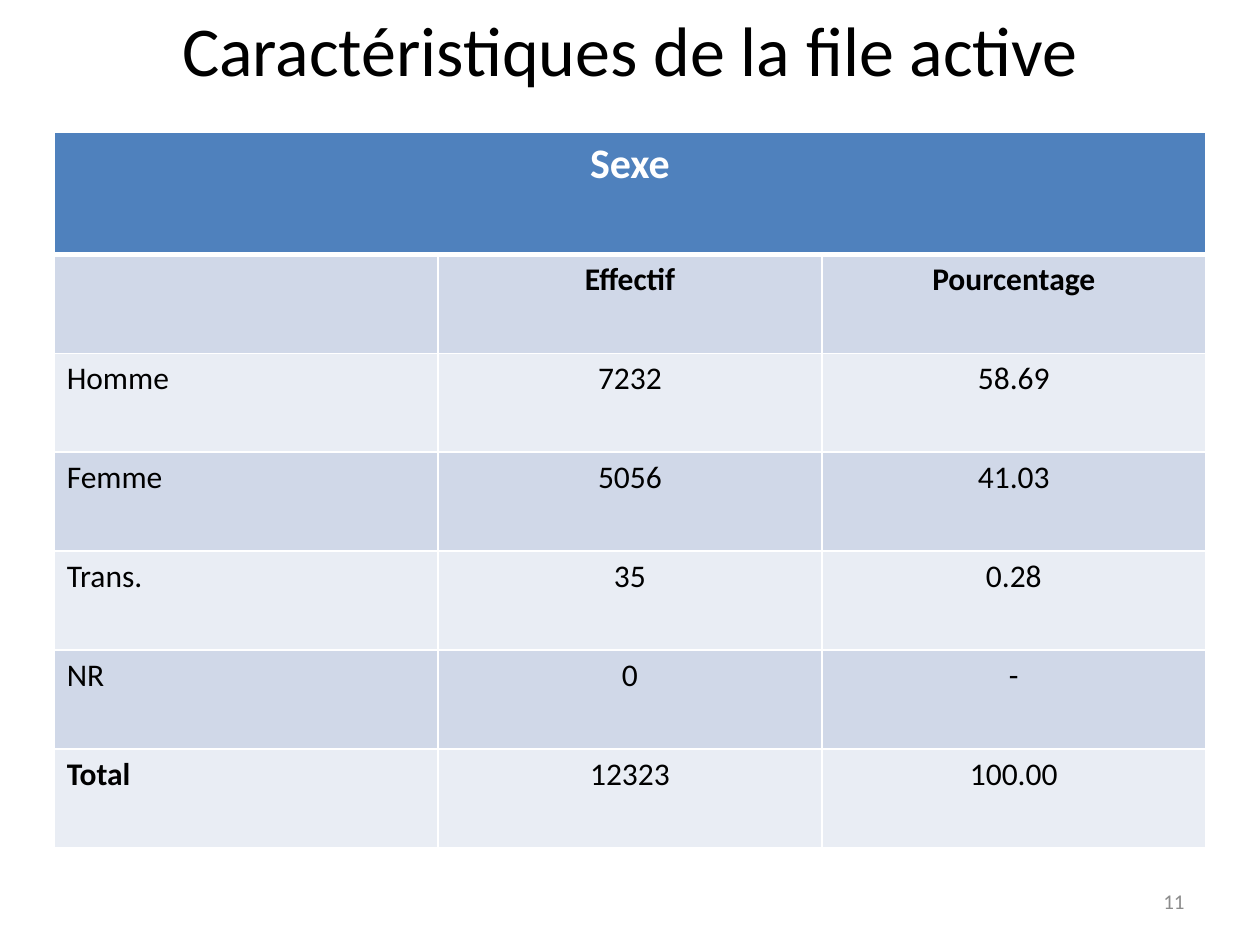
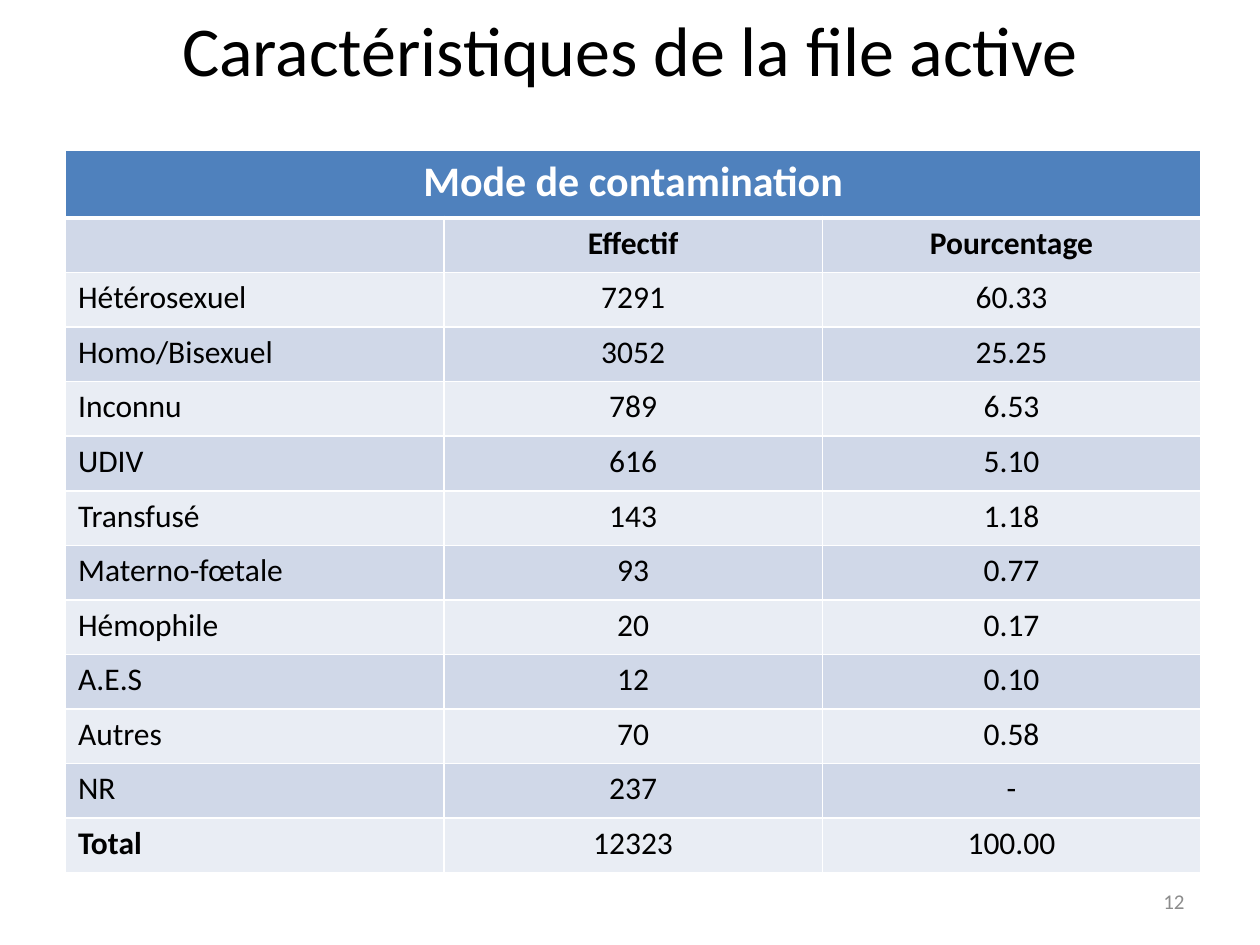
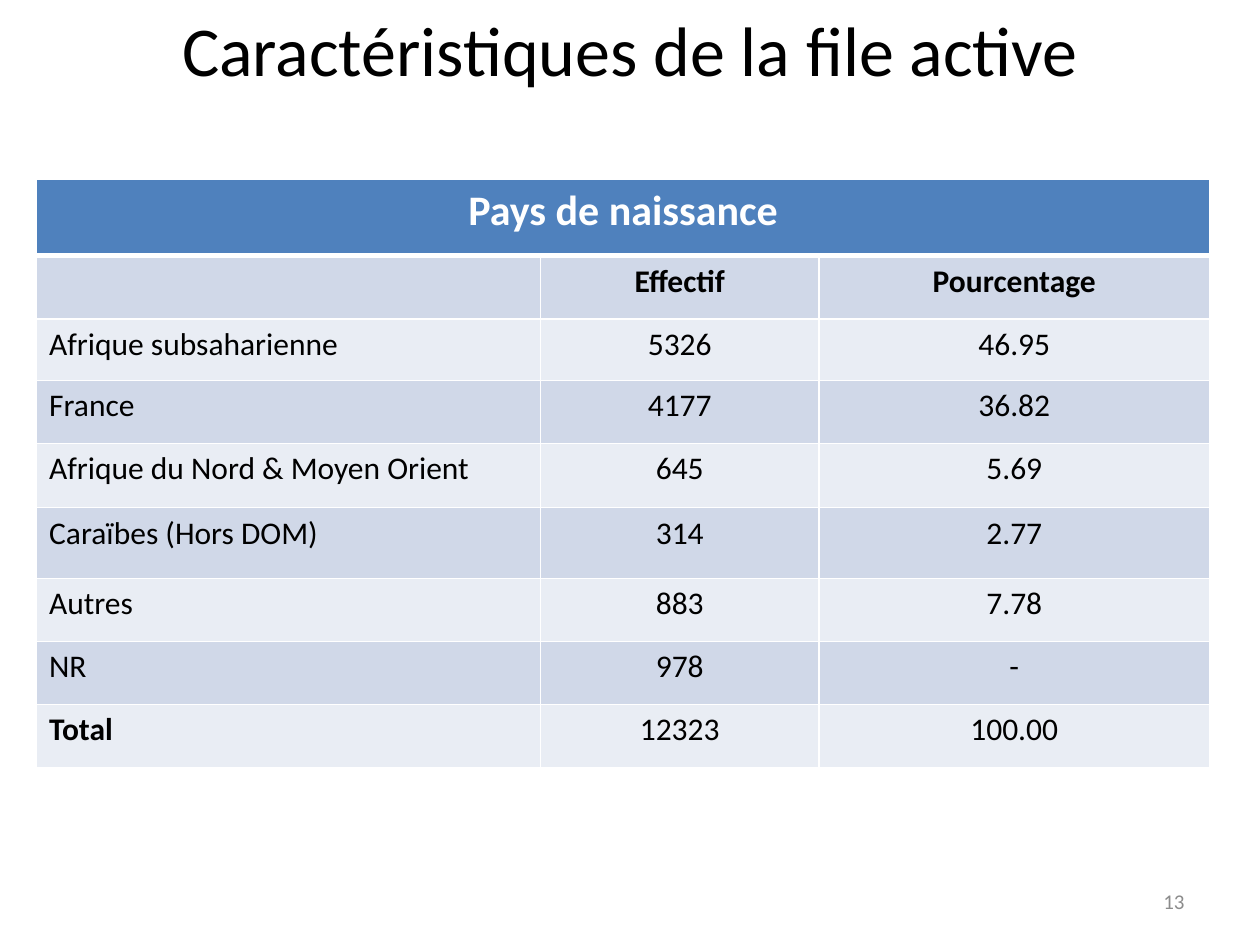
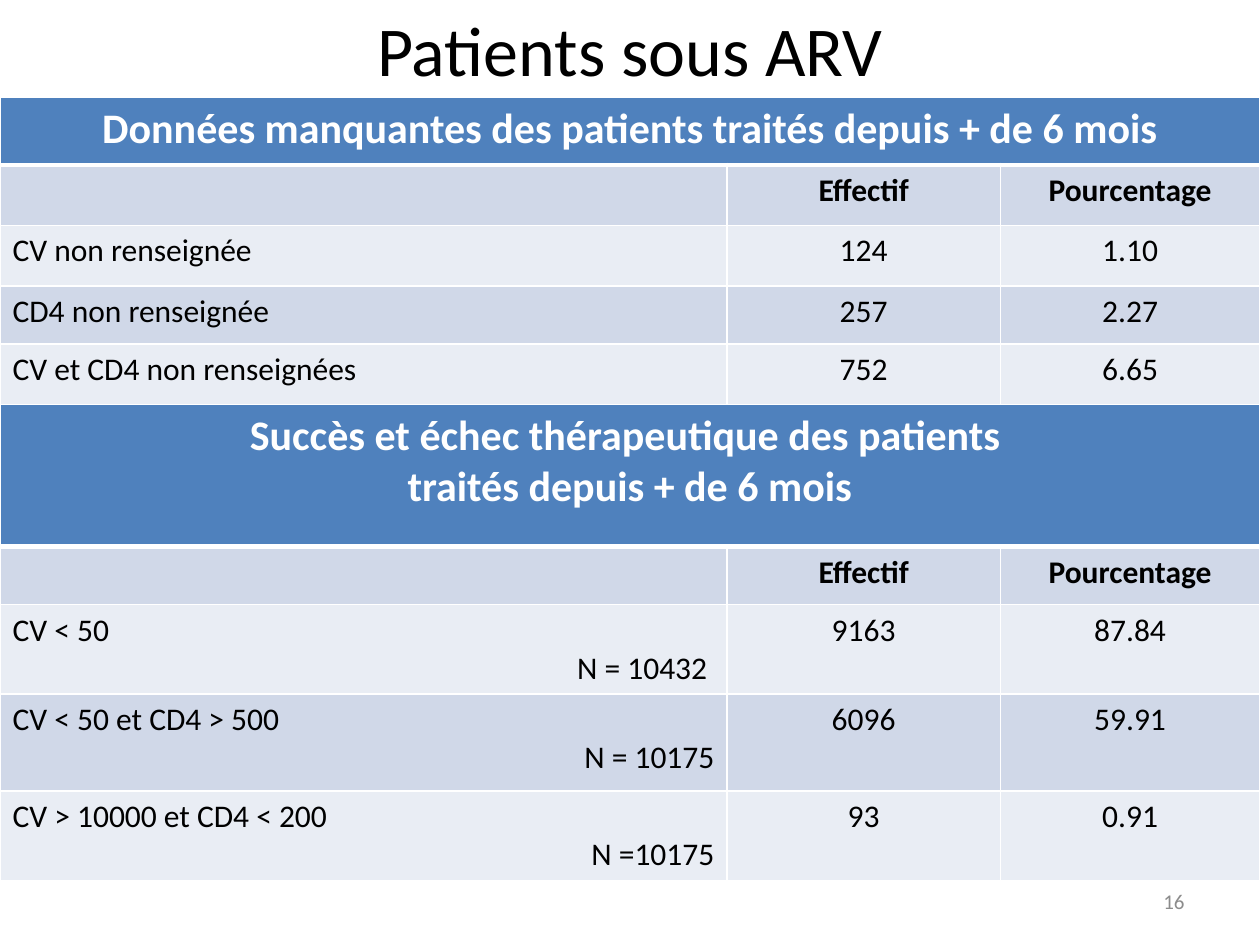
from lxml import etree
from pptx import Presentation
from pptx.dml.color import RGBColor
from pptx.enum.text import MSO_ANCHOR, PP_ALIGN
from pptx.oxml.ns import qn
from pptx.util import Inches, Pt

LEFT, CENTER, RIGHT = PP_ALIGN.LEFT, PP_ALIGN.CENTER, PP_ALIGN.RIGHT
TOP, MIDDLE = MSO_ANCHOR.TOP, MSO_ANCHOR.MIDDLE

FONT = "Calibri"
COLORS = {
    "text": "000000",
    "white": "FFFFFF",
    "header": "4F81BD",
    "band_dark": "D0D8E8",
    "band_light": "E9EDF4",
    "number": "8C8C8C",
}
TITLE_BOX = (0, 0, 10, 0.77)
NUMBER_BOX = (7.17, 6.95, 2.33, 0.4)
COLUMN_HEADS = ("", "Effectif", "Pourcentage")
ACTIVE_FILE = "Caractéristiques de la file active"

SEX = [
    ("Homme", "7232", "58.69"),
    ("Femme", "5056", "41.03"),
    ("Trans.", "35", "0.28"),
    ("NR", "0", "-"),
    ("Total", "12323", "100.00"),
]
CONTAMINATION = [
    ("Hétérosexuel", "7291", "60.33"),
    ("Homo/Bisexuel", "3052", "25.25"),
    ("Inconnu", "789", "6.53"),
    ("UDIV", "616", "5.10"),
    ("Transfusé", "143", "1.18"),
    ("Materno-fœtale", "93", "0.77"),
    ("Hémophile", "20", "0.17"),
    ("A.E.S", "12", "0.10"),
    ("Autres", "70", "0.58"),
    ("NR", "237", "-"),
    ("Total", "12323", "100.00"),
]
BIRTH_COUNTRY = [
    ("Afrique subsaharienne", "5326", "46.95"),
    ("France", "4177", "36.82"),
    ("Afrique du Nord & Moyen Orient", "645", "5.69"),
    ("Caraïbes (Hors DOM)", "314", "2.77"),
    ("Autres", "883", "7.78"),
    ("NR", "978", "-"),
    ("Total", "12323", "100.00"),
]
MISSING_DATA = [
    ("CV non renseignée", "124", "1.10"),
    ("CD4 non renseignée", "257", "2.27"),
    ("CV et CD4 non renseignées", "752", "6.65"),
]
OUTCOMES = [
    ("CV < 50\nN = 10432 ", "9163", "87.84"),
    ("CV < 50 et CD4 > 500\nN = 10175", "6096", "59.91"),
    ("CV > 10000 et CD4 < 200\nN =10175", "93", "0.91"),
]


def color(name):
    return RGBColor.from_string(COLORS[name])


def write(tf, text, size=18, fill="text", bold=False, align=LEFT, next_align=None):
    for i, line in enumerate(text.split("\n")):
        p = tf.add_paragraph() if i else tf.paragraphs[0]
        p.alignment = next_align if i and next_align else align
        if line:
            r = p.add_run()
            r.text = line
            r.font.name = FONT
            r.font.size = Pt(size)
            r.font.bold = bold
            r.font.color.rgb = color(fill)


def add_text(s, box, text, anchor=TOP, **style):
    sp = s.shapes.add_textbox(*map(Inches, box))
    tf = sp.text_frame
    tf.word_wrap = True
    tf.vertical_anchor = anchor
    write(tf, text, **style)


def add_title(s, text):
    add_text(s, TITLE_BOX, text, size=40, align=CENTER)


def add_number(s, number):
    add_text(s, NUMBER_BOX, str(number), MIDDLE, size=12, fill="number", align=RIGHT)


def format_cell(cell, fill, top=1, bottom=1):
    tcPr = cell._tc.get_or_add_tcPr()
    for side, width in (("L", 1), ("R", 1), ("T", top), ("B", bottom)):
        ln = etree.SubElement(tcPr, qn(f"a:ln{side}"), w=str(Pt(width)))
        solid = etree.SubElement(ln, qn("a:solidFill"))
        etree.SubElement(solid, qn("a:srgbClr"), val=COLORS["white"])
    cell.fill.solid()
    cell.fill.fore_color.rgb = color(fill)


def add_data_table(s, box, heading, records, cols, heights):
    rows = [COLUMN_HEADS] + records
    frame = s.shapes.add_table(len(rows) + 1, len(cols), *map(Inches, box))
    table = frame.table
    table.first_row = False
    table.horz_banding = False
    for column, width in zip(table.columns, cols):
        column.width = Inches(width)
    for row, height in zip(table.rows, heights):
        row.height = Inches(height)

    title = table.cell(0, 0)
    title.merge(table.cell(0, len(cols) - 1))
    for cell in table.rows[0].cells:
        format_cell(cell, "header", bottom=3)
    write(title.text_frame, heading, size=24, fill="white", bold=True, align=CENTER)

    for i, values in enumerate(rows, 1):
        band = "band_dark" if i % 2 else "band_light"
        for j, value in enumerate(values):
            cell = table.cell(i, j)
            format_cell(cell, band, top=3 if i == 1 else 1)
            write(cell.text_frame, value, bold=i == 1 or value == "Total",
                  align=CENTER if j else LEFT, next_align=RIGHT)


def even_rows(total, header, count):
    return [header] + [(total - header) / count] * count


def add_table_slide(prs, number, box, heading, records, cols, heights):
    s = prs.slides.add_slide(prs.slide_layouts[6])
    add_data_table(s, box, heading, records, cols, heights)
    add_title(s, ACTIVE_FILE)
    add_number(s, number)


def add_treatment_slide(prs, number):
    s = prs.slides.add_slide(prs.slide_layouts[6])
    cols = (5.77, 2.17, 2.06)
    add_number(s, number)
    add_data_table(s, (0, 0.77, 10, 2.44),
                   "Données manquantes des patients traités depuis + de 6 mois",
                   MISSING_DATA, cols, (0.54, 0.48, 0.48, 0.46, 0.48))
    add_title(s, "Patients sous ARV")
    add_data_table(s, (0, 3.21, 10, 3.79),
                   "Succès et échec thérapeutique des patients \ntraités depuis + de 6 mois",
                   OUTCOMES, cols, (1.13, 0.46, 0.71, 0.77, 0.71))


def main():
    prs = Presentation()
    prs.slide_width, prs.slide_height = Inches(10), Inches(7.5)
    add_table_slide(prs, 11, (0.43, 1.05, 9.14, 5.68), "Sexe", SEX,
                    [9.14 / 3] * 3, even_rows(5.68, 0.97, 6))
    add_table_slide(prs, 12, (0.52, 1.19, 9.01, 5.74), "Mode de contamination",
                    CONTAMINATION, [9.01 / 3] * 3, even_rows(5.74, 0.54, 12))
    add_table_slide(prs, 13, (0.29, 1.42, 9.31, 4.67), "Pays de naissance",
                    BIRTH_COUNTRY, (4, 2.21, 3.1),
                    (0.61, 0.5, 0.49, 0.5, 0.51, 0.56, 0.5, 0.5, 0.5))
    add_treatment_slide(prs, 16)
    prs.save("out.pptx")


if __name__ == "__main__":
    main()
